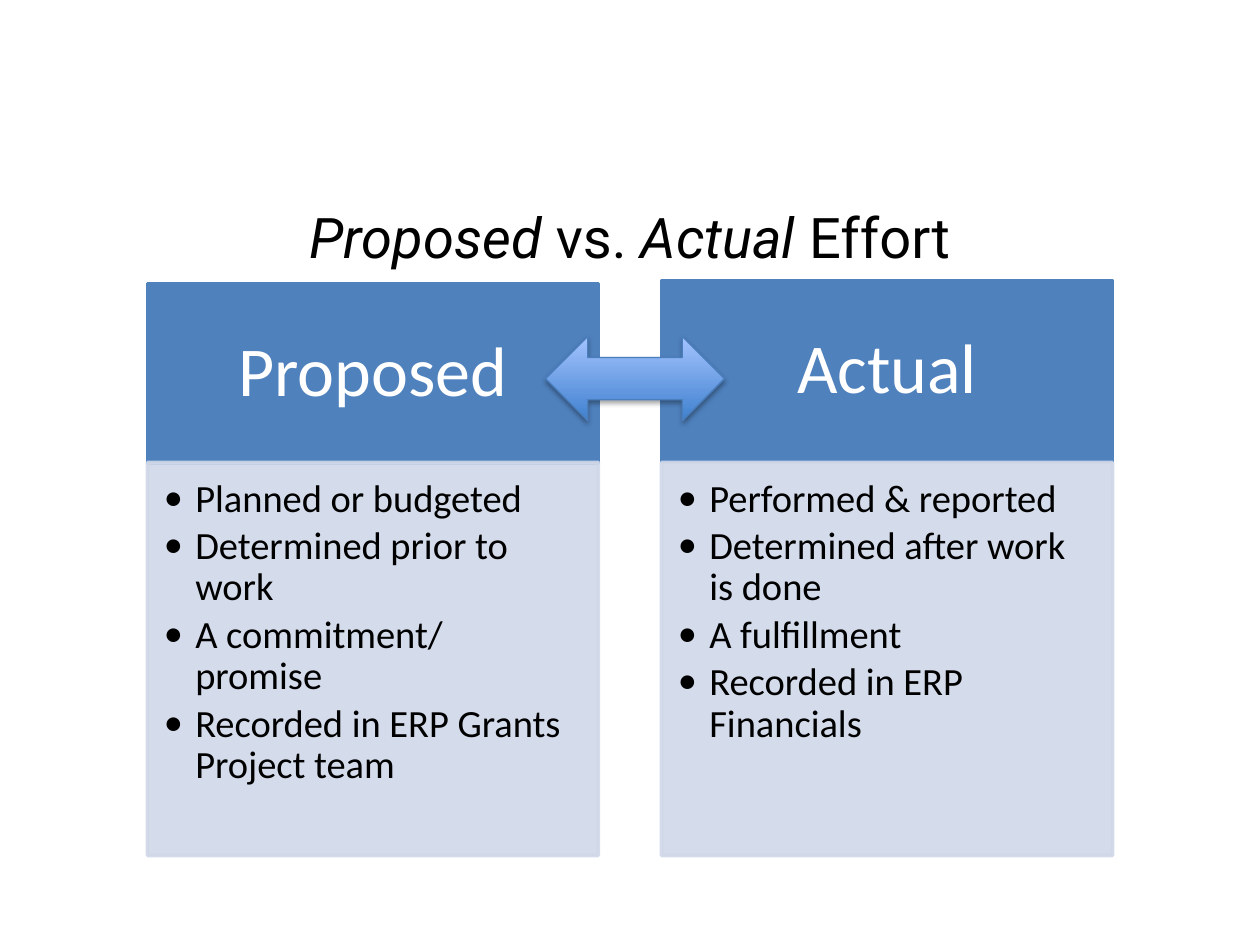
"""Build the slide that sets proposed effort against actual effort."""
from lxml.etree import SubElement
from pptx import Presentation
from pptx.dml.color import RGBColor
from pptx.enum.shapes import MSO_SHAPE
from pptx.enum.text import MSO_ANCHOR, PP_ALIGN
from pptx.oxml.ns import qn
from pptx.util import Inches, Pt

COLORS = {"head": "4F81BD", "body": "D0D8E8", "white": "FFFFFF", "black": "000000",
          "edge": "4B7EBC", "low": "3F80CE", "high": "A4C4FF"}
COLUMNS = [
    (1.17, 2.25, "Proposed", ["Planned or budgeted", "Determined prior to work",
                              "A commitment/ promise", "Recorded in ERP Grants Project team"]),
    (5.25, 2.23, "Actual", ["Performed & reported", "Determined after work is done",
                            "A fulfillment", "Recorded in ERP Financials"]),
]


def add_run(para, text, size, color, face="Calibri", slant=False):
    """Add one styled run to a paragraph."""
    run = para.add_run()
    run.text = text
    font = run.font
    font.size, font.name, font.italic = Pt(size), face, slant
    font.color.rgb = RGBColor.from_string(COLORS[color])


def add_box(left, top, height, color, pads, anchor):
    """Add a plain filled box and return it."""
    box = slide.shapes.add_shape(MSO_SHAPE.RECTANGLE, Inches(left), Inches(top),
                                 Inches(3.58), Inches(height))
    box.shadow.inherit = False
    box.fill.solid()
    box.fill.fore_color.rgb = box.line.color.rgb = RGBColor.from_string(COLORS[color])
    box.line.width = Pt(2)
    frame = box.text_frame
    frame.word_wrap, frame.vertical_anchor = True, anchor
    (frame.margin_left, frame.margin_top,
     frame.margin_right, frame.margin_bottom) = map(Inches, pads)
    return box


deck = Presentation()
deck.slide_width, deck.slide_height = Inches(10), Inches(7.5)
slide = deck.slides.add_slide(deck.slide_layouts[6])

title = slide.shapes.add_textbox(Inches(0.5), Inches(1.25), Inches(9), Inches(1.25))
title.text_frame.word_wrap = True
title.text_frame.vertical_anchor = MSO_ANCHOR.MIDDLE
para = title.text_frame.paragraphs[0]
para.alignment = PP_ALIGN.CENTER
for text, slant in [("Proposed", True), (" vs. ", False), ("Actual", True), (" Effort", False)]:
    add_run(para, text, 32, "black", "Roboto", slant)

for left, top, name, points in COLUMNS:
    head = add_box(left, top, 1.43, "head", (0.31, 0.18, 0.31, 0.18), MSO_ANCHOR.MIDDLE)
    para = head.text_frame.paragraphs[0]
    para.alignment, para.line_spacing = PP_ALIGN.CENTER, 0.9
    add_run(para, name, 40, "white")

    body = add_box(left, 3.67, 3.12, "body", (0.13, 0.13, 0.17, 0.19), MSO_ANCHOR.TOP)
    for tint in body.element.spPr.iter(qn("a:srgbClr")):
        SubElement(tint, qn("a:alpha"), val="90000")
    frame = body.text_frame
    for index, point in enumerate(points):
        para = frame.add_paragraph() if index else frame.paragraphs[0]
        para.alignment, para.level = PP_ALIGN.LEFT, 1
        para.line_spacing, para.space_after = 0.9, Pt(3.3)
        props = para._p.get_or_add_pPr()
        props.set("marL", str(Inches(0.25)))
        props.set("indent", str(Inches(-0.25)))
        SubElement(props, qn("a:buFont"), typeface="Calibri")
        SubElement(props, qn("a:buChar"), char="•")
        add_run(para, point, 22, "black")

arrow = slide.shapes.add_shape(MSO_SHAPE.LEFT_RIGHT_ARROW, Inches(4.33), Inches(2.67),
                               Inches(1.42), Inches(0.67))
arrow.fill.gradient()
arrow.fill.gradient_angle = 90
for stop, place, color in zip(arrow.fill.gradient_stops, (0, 1), ("low", "high")):
    stop.position = place
    stop.color.rgb = RGBColor.from_string(COLORS[color])
arrow.line.color.rgb = RGBColor.from_string(COLORS["edge"])
arrow.line.width = Pt(0.75)
arrow.shadow.inherit = False
glow = SubElement(arrow.element.spPr.find(qn("a:effectLst")), qn("a:outerShdw"),
                  blurRad=str(Pt(3.1)), dist=str(Pt(1.8)), dir="5400000", rotWithShape="0")
shade = SubElement(glow, qn("a:srgbClr"), val=COLORS["black"])
SubElement(shade, qn("a:alpha"), val="35000")

deck.save("out.pptx")
